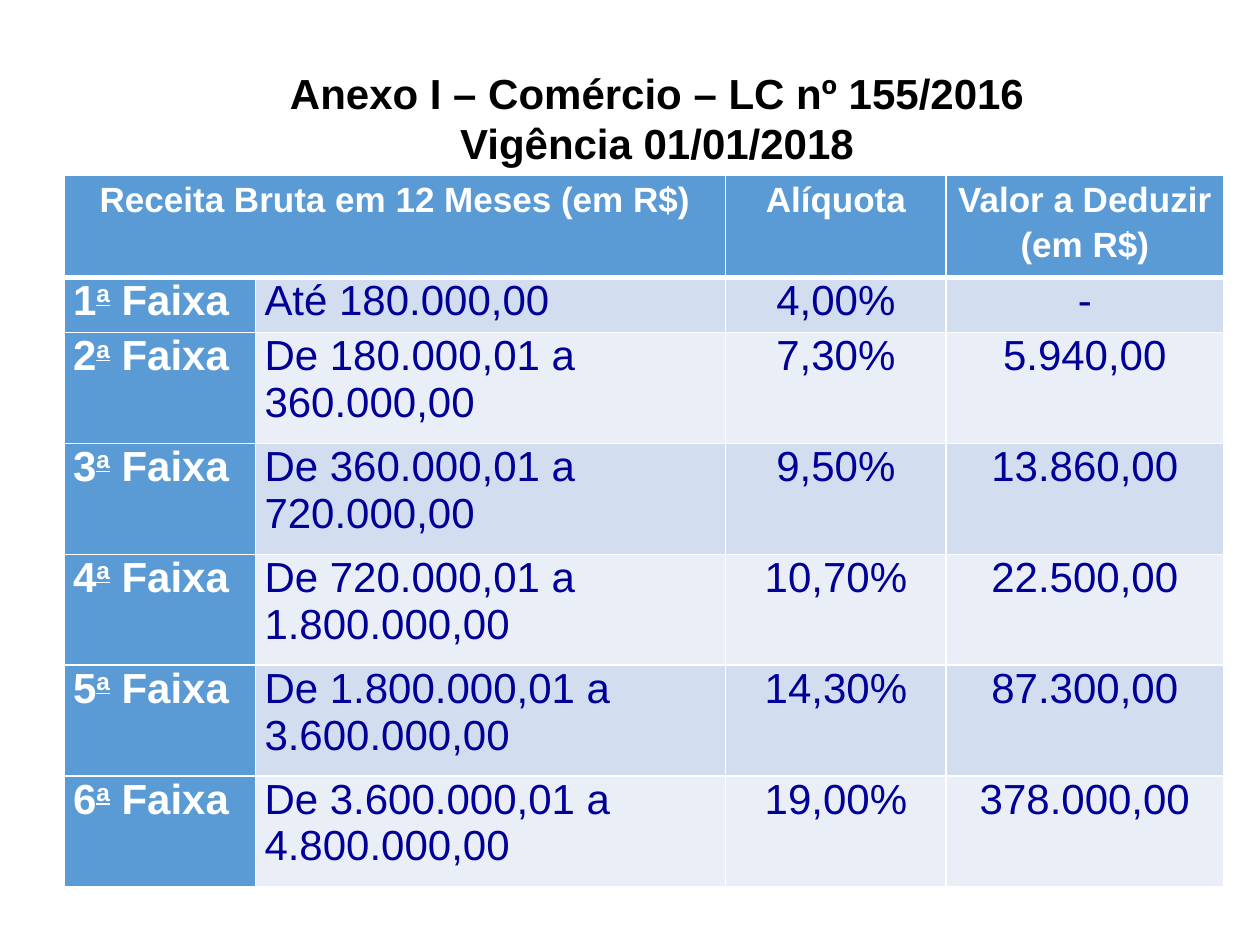
from lxml import etree
from pptx import Presentation, util as u
from pptx.dml.color import RGBColor
from pptx.enum import text
from pptx.oxml import ns

COLORS = {
    "blue": "5B9BD5",
    "band_dark": "D2DEEF",
    "band_light": "EAEFF7",
    "navy": "000099",
    "white": "FFFFFF",
    "black": "000000",
}
COLUMNS = (1.52, 3.73, 1.75, 2.2)
ROWS = (0.81, 0.44) + (0.88,) * 5
HEADINGS = {0: "Receita Bruta em 12 Meses (em R$)", 2: "Alíquota", 3: "Valor a Deduzir (em R$)"}
BRACKETS = (
    ("Até 180.000,00", "4,00%", "-"),
    ("De 180.000,01 a 360.000,00", "7,30%", "5.940,00"),
    ("De 360.000,01 a 720.000,00", "9,50%", "13.860,00"),
    ("De 720.000,01 a 1.800.000,00", "10,70%", "22.500,00"),
    ("De 1.800.000,01 a 3.600.000,00", "14,30%", "87.300,00"),
    ("De 3.600.000,01 a 4.800.000,00", "19,00%", "378.000,00"),
)


def rgb(name):
    """Return the named colour."""
    return RGBColor.from_string(COLORS[name])


def style_paragraph(para, size, color, bold, centred):
    """Set the font and alignment of a paragraph."""
    para.font.name = "Arial"
    para.font.size = u.Pt(size)
    para.font.bold = bold
    para.font.color.rgb = rgb(color)
    para.alignment = text.PP_ALIGN.CENTER if centred else text.PP_ALIGN.LEFT


def add_title(page, lines):
    """Place the two-line title above the table."""
    box = page.shapes.title
    box.left, box.top, box.width, box.height = map(u.Inches, (2.17, 0.48, 6.09, 0.91))
    frame = box.text_frame
    frame.text = "\n".join(lines)
    frame.word_wrap = False
    frame.auto_size = text.MSO_AUTO_SIZE.SHAPE_TO_FIT_TEXT
    for para in frame.paragraphs:
        style_paragraph(para, 24, "black", True, True)


def set_borders(cell, top, bottom):
    """Draw white cell borders with the given top and bottom widths in points."""
    properties = cell._tc.get_or_add_tcPr()
    for side, width in (("L", 1), ("R", 1), ("T", top), ("B", bottom)):
        line = etree.SubElement(properties, ns.qn(f"a:ln{side}"), w=str(u.Pt(width)))
        fill = etree.SubElement(line, ns.qn("a:solidFill"))
        etree.SubElement(fill, ns.qn("a:srgbClr"), val=COLORS["white"])


def format_cell(cell, fill, top=1, bottom=1):
    """Set margins, borders and fill of a cell."""
    cell.margin_left = cell.margin_right = u.Inches(0.07)
    cell.margin_top = cell.margin_bottom = 0
    set_borders(cell, top, bottom)
    cell.fill.solid()
    cell.fill.fore_color.rgb = rgb(fill)


def write_heading(cell, words):
    """Write a column heading."""
    para = cell.text_frame.paragraphs[0]
    para.text = words
    style_paragraph(para, 20, "white", True, True)
    para.line_spacing = 1.15
    para.space_after = u.Pt(10)


def write_entry(cell, parts, color, bold, centred):
    """Write a body cell, raising and underlining its second part."""
    para = cell.text_frame.paragraphs[0]
    style_paragraph(para, 24, color, bold, centred)
    para.space_before, para.space_after = u.Pt(12), u.Pt(24)
    for index, part in enumerate(parts):
        span = para.add_run()
        span.text = part
        if index == 1:
            span.font.underline = True
            span._r.get_or_add_rPr().set("baseline", "30000")


def add_rate_table(page):
    """Add the table of revenue brackets, rates and deductions."""
    frame = page.shapes.add_table(
        len(ROWS), len(COLUMNS), u.Inches(0.51), u.Inches(1.39),
        u.Inches(sum(COLUMNS)), u.Inches(sum(ROWS)))
    table = frame.table
    table.first_col = True
    for column, width in zip(table.columns, COLUMNS):
        column.width = u.Inches(width)
    for row, height in zip(table.rows, ROWS):
        row.height = u.Inches(height)

    for col in range(len(COLUMNS)):
        format_cell(table.cell(0, col), "blue", bottom=3)
    table.cell(0, 0).merge(table.cell(0, 1))
    for col, words in HEADINGS.items():
        write_heading(table.cell(0, col), words)

    for row, values in enumerate(BRACKETS, 1):
        top = 3 if row == 1 else 1
        label = table.cell(row, 0)
        format_cell(label, "blue", top)
        write_entry(label, (str(row), "a", " Faixa"), "white", True, False)
        for col, value in enumerate(values, 1):
            cell = table.cell(row, col)
            format_cell(cell, "band_dark" if row % 2 else "band_light", top)
            write_entry(cell, (value,), "navy", False, col > 1)


def main():
    """Build and save the slide."""
    deck = Presentation()
    deck.slide_width, deck.slide_height = u.Inches(10), u.Inches(7.5)
    page = deck.slides.add_slide(deck.slide_layouts.get_by_name("Title Only"))
    add_rate_table(page)
    add_title(page, ("Anexo I – Comércio – LC nº 155/2016", "Vigência 01/01/2018"))
    deck.save("out.pptx")


if __name__ == "__main__":
    main()
